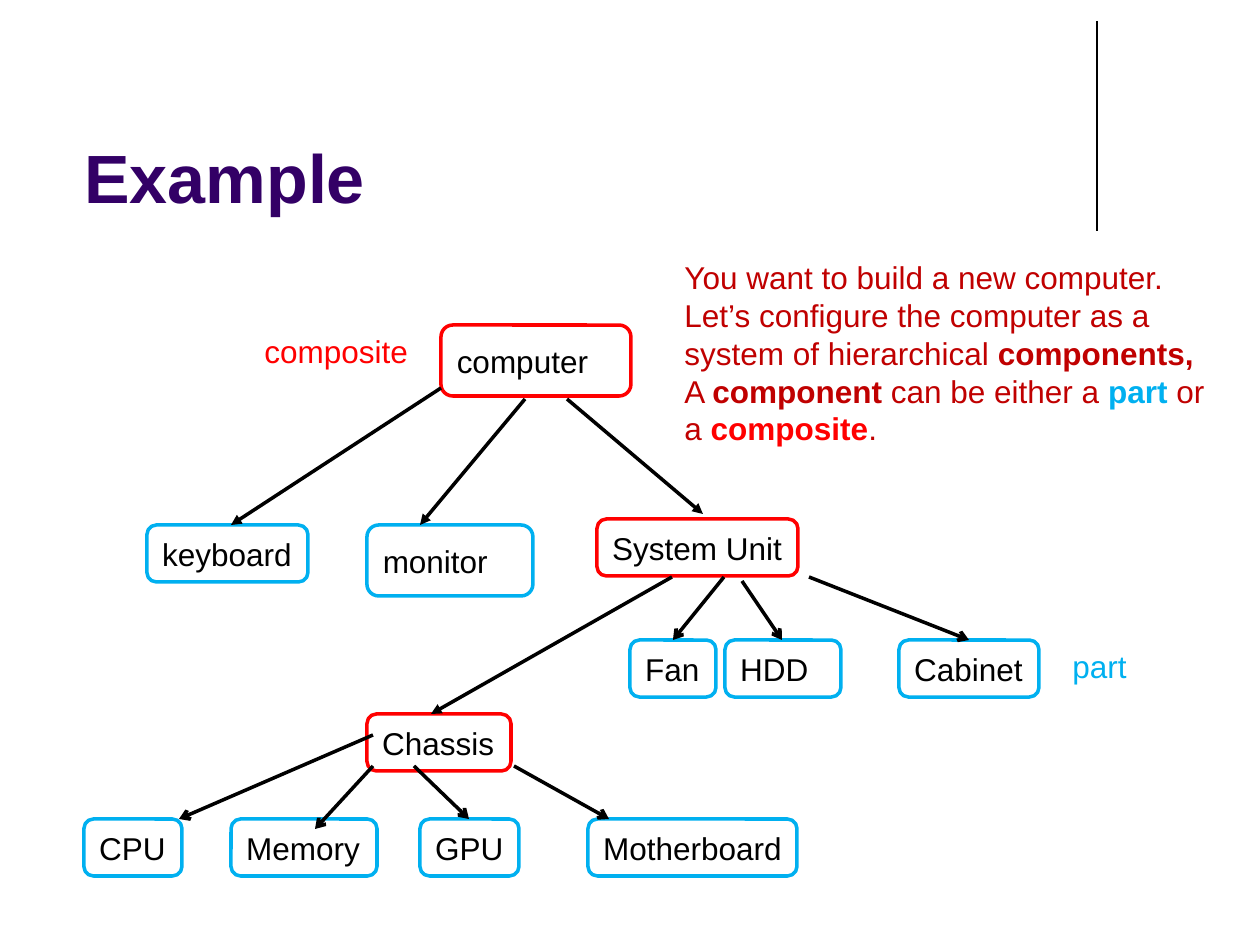
from pptx import Presentation
from pptx.dml.color import RGBColor
from pptx.enum.shapes import MSO_CONNECTOR, MSO_SHAPE
from pptx.enum.text import MSO_ANCHOR, PP_ALIGN
from pptx.oxml.ns import qn
from pptx.util import Pt
from lxml.etree import SubElement

EMU_PER_PX = 914400 / 126
BLACK = RGBColor(0x00, 0x00, 0x00)
RED = RGBColor(0xFF, 0x00, 0x00)
DARK_RED = RGBColor(0xC0, 0x00, 0x00)
BLUE = RGBColor(0x00, 0xB0, 0xF0)
PURPLE = RGBColor(0x33, 0x00, 0x66)

COMPOSITES = [
    ("computer", 441, 325, 190, 71),
    ("System Unit", 597, 519, 201, 57),
    ("Chassis", 367, 714, 144, 57),
]
PARTS = [
    ("keyboard", 147, 525, 161, 57),
    ("monitor", 367, 525, 166, 71),
    ("Fan", 630, 640, 86, 57),
    ("HDD", 725, 640, 116, 57),
    ("Cabinet", 899, 640, 140, 57),
    ("CPU", 84, 819, 98, 57),
    ("Memory", 231, 819, 146, 57),
    ("GPU", 420, 819, 99, 57),
    ("Motherboard", 588, 819, 209, 57),
]
TRIANGLE_LINKS = [
    (441, 388, 231, 525),
    (525, 399, 420, 525),
    (567, 399, 703, 514),
    (672, 577, 431, 714),
]
ARROW_LINKS = [
    (724, 577, 673, 640),
    (742, 581, 782, 640),
    (809, 577, 969, 640),
    (373, 735, 179, 819),
    (373, 766, 315, 829),
    (414, 766, 469, 819),
    (514, 766, 609, 819),
]
DESCRIPTION = [
    ("You want to build a new computer. Let’s configure the computer "
     "as a system of hierarchical ", DARK_RED, False),
    ("components, ", DARK_RED, True),
    ("A ", DARK_RED, False),
    ("component", DARK_RED, True),
    (" can be either a ", DARK_RED, False),
    ("part", BLUE, True),
    (" or a ", DARK_RED, False),
    ("composite", RED, True),
    (".", DARK_RED, False),
]


def px(*values):
    return [round(v * EMU_PER_PX) for v in values]


def add_run(p, text, *, size=18, color=BLACK, bold=False):
    r = p.add_run()
    r.text = text
    r.font.name = "Arial"
    r.font.size = Pt(size)
    r.font.bold = bold
    r.font.color.rgb = color


def start_text(sp, anchor):
    tf = sp.text_frame
    tf.word_wrap = True
    tf.margin_right = 0
    tf.vertical_anchor = anchor
    p = tf.paragraphs[0]
    p.alignment = PP_ALIGN.LEFT
    return p


def add_text(s, box, runs, anchor=MSO_ANCHOR.TOP, size=18):
    p = start_text(s.shapes.add_textbox(*px(*box)), anchor)
    for text, color, bold in runs:
        add_run(p, text, size=size, color=color, bold=bold)


def add_node(s, text, box, color):
    sp = s.shapes.add_shape(MSO_SHAPE.ROUNDED_RECTANGLE, *px(*box))
    sp.shadow.inherit = False
    sp.fill.background()
    sp.line.color.rgb = color
    sp.line.width = Pt(2)
    add_run(start_text(sp, MSO_ANCHOR.MIDDLE), text)


def add_line(s, ends, width=2, head=None):
    line = s.shapes.add_connector(MSO_CONNECTOR.STRAIGHT, *px(*ends))
    line.line.color.rgb = BLACK
    line.line.width = Pt(width)
    if head:
        SubElement(line.line._get_or_add_ln(), qn("a:tailEnd"), type=head)
    SubElement(line._element.spPr, qn("a:effectLst"))


def main():
    prs = Presentation()
    prs.slide_width, prs.slide_height = px(1260, 945)
    s = prs.slides.add_slide(prs.slide_layouts[6])

    add_line(s, (1097, 21, 1097, 231), width=0.75)
    add_text(s, (72, 30, 1184, 193), [("Example", PURPLE, True)],
             anchor=MSO_ANCHOR.BOTTOM, size=39)
    add_text(s, (672, 252, 536, 204), DESCRIPTION)

    for color, nodes in ((RED, COMPOSITES), (BLUE, PARTS)):
        for text, *box in nodes:
            add_node(s, text, box, color)
    for head, links in (("triangle", TRIANGLE_LINKS), ("arrow", ARROW_LINKS)):
        for ends in links:
            add_line(s, ends, head=head)

    add_text(s, (252, 326, 170, 50), [("composite", RED, False)])
    add_text(s, (1060, 641, 81, 50), [("part", BLUE, False)])
    prs.save("out.pptx")


if __name__ == "__main__":
    main()
